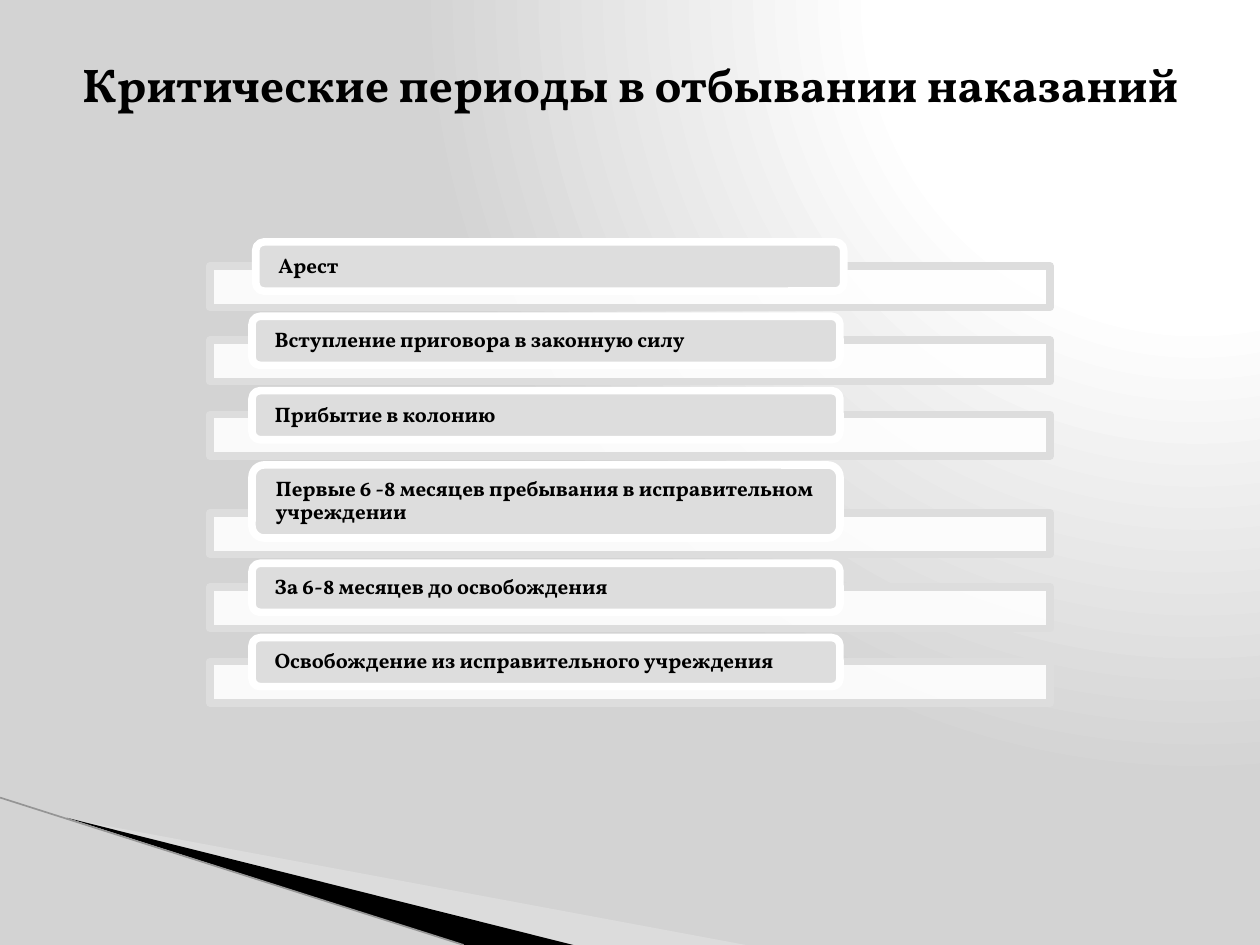
from dataclasses import dataclass

from lxml import etree
from pptx import Presentation
from pptx.dml.color import RGBColor
from pptx.enum.shapes import MSO_CONNECTOR, MSO_SHAPE
from pptx.enum.text import MSO_ANCHOR, PP_ALIGN
from pptx.oxml.ns import qn
from pptx.util import Inches, Pt

RECTANGLE, ROUNDED = MSO_SHAPE.RECTANGLE, MSO_SHAPE.ROUNDED_RECTANGLE
STRAIGHT = MSO_CONNECTOR.STRAIGHT
MIDDLE = MSO_ANCHOR.MIDDLE
LEFT, CENTER = PP_ALIGN.LEFT, PP_ALIGN.CENTER


@dataclass(frozen=True)
class Theme:
    font: str = "Vollkorn"
    title_size: float = 27
    label_size: float = 12
    border: float = 4.33
    hairline: float = 0.95
    black: str = "000000"
    white: str = "FFFFFF"
    grey: str = "DDDDDD"
    backdrop: str = "D3D3D3"
    pale: str = "EAEAEA"
    edge: str = "959595"


theme = Theme()


def paint(shape, fill, opacity=100, border=None):
    """Give a shape a flat fill, an optional border and no shadow."""
    shape.shadow.inherit = False
    shape.fill.solid()
    shape.fill.fore_color.rgb = RGBColor.from_string(fill)
    if opacity < 100:
        color = shape.fill._xPr.find(".//" + qn("a:srgbClr"))
        etree.SubElement(color, qn("a:alpha"), val=str(opacity * 1000))
    if border:
        shape.line.color.rgb = RGBColor.from_string(border)
        shape.line.width = Pt(theme.border)
    else:
        shape.line.fill.background()


def write(shape, text, size, align):
    """Set bold theme text, centred vertically."""
    frame = shape.text_frame
    frame.text = text
    frame.word_wrap = True
    frame.vertical_anchor = MIDDLE
    paragraph = frame.paragraphs[0]
    paragraph.alignment = align
    font = paragraph.runs[0].font
    font.name, font.size, font.bold = theme.font, Pt(size), True
    font.color.rgb = RGBColor.from_string(theme.black)


prs = Presentation()
prs.slide_width, prs.slide_height = Inches(10), Inches(7.5)
slide = prs.slides.add_slide(prs.slide_layouts[5])
shapes = slide.shapes

# Radial backdrop, lightest at the upper right
slide.background.fill.gradient()
gradient = slide.element.find(".//" + qn("a:gradFill"))
for child in list(gradient):
    gradient.remove(child)
stops = etree.SubElement(gradient, qn("a:gsLst"))
for position, color in ((0, theme.white), (40, theme.white), (100, theme.backdrop)):
    stop = etree.SubElement(stops, qn("a:gs"), pos=str(position * 1000))
    etree.SubElement(stop, qn("a:srgbClr"), val=color)
circle = etree.SubElement(gradient, qn("a:path"), path="circle")
etree.SubElement(circle, qn("a:fillToRect"), l="95000", t="-106000", r="5000", b="206000")

# Wedges in the lower left corner
wedges = (
    ([(0.55, 6.5), (5.92, 7.5), (4.55, 7.5)], theme.pale, 40),
    ([(0.53, 6.49), (4.55, 7.5), (3.68, 7.5)], theme.black, 100),
)
for corners, color, opacity in wedges:
    points = [(Inches(x), Inches(y)) for x, y in corners]
    builder = shapes.build_freeform(*points[0])
    builder.add_line_segments(points[1:], close=True)
    paint(builder.convert_to_shape(), color, opacity)

wedge_edge = shapes.add_connector(STRAIGHT, 0, Inches(6.33), Inches(3.68), Inches(7.5))
wedge_edge.line.color.rgb = RGBColor.from_string(theme.edge)
wedge_edge.line.width = Pt(theme.hairline)
etree.SubElement(wedge_edge._element.spPr, qn("a:effectLst"))

# Title, raised within its box
title = shapes.title
title.left, title.top = Inches(0.5), Inches(0.3)
title.width, title.height = Inches(9), Inches(1.25)
write(title, "Критические периоды в отбывании наказаний", theme.title_size, CENTER)
title.text_frame.margin_bottom = Inches(0.57)

# Periods: each label overlaps the top of a wide panel; columns are sixths of the width
column = prs.slide_width / 6
gap, panel_height = Inches(0.2), Inches(0.33)
one_line, two_lines = Inches(0.39), Inches(0.58)
first_indent, indent = Inches(2.03), Inches(2)
periods = (
    ("Арест", first_indent, one_line),
    ("Вступление приговора в законную силу", indent, one_line),
    ("Прибытие в колонию", indent, one_line),
    ("Первые 6 -8 месяцев пребывания в исправительном учреждении", indent, two_lines),
    ("За 6-8 месяцев до освобождения", indent, one_line),
    ("Освобождение из исправительного учреждения", indent, one_line),
)
top = Inches(1.92)
for period, left, height in periods:
    bottom = top + height
    panel = shapes.add_shape(RECTANGLE, int(column), bottom - gap, int(4 * column), panel_height)
    paint(panel, theme.white, 90, theme.grey)

    label = shapes.add_shape(ROUNDED, left, top, int(2.8 * column), height)
    paint(label, theme.grey, border=theme.white)
    write(label, period, theme.label_size, LEFT)
    frame = label.text_frame
    frame.margin_left = frame.margin_right = Inches(0.16)
    frame.margin_top = frame.margin_bottom = 0
    frame.paragraphs[0].line_spacing = 0.9
    top = bottom + gap

prs.save("out.pptx")
